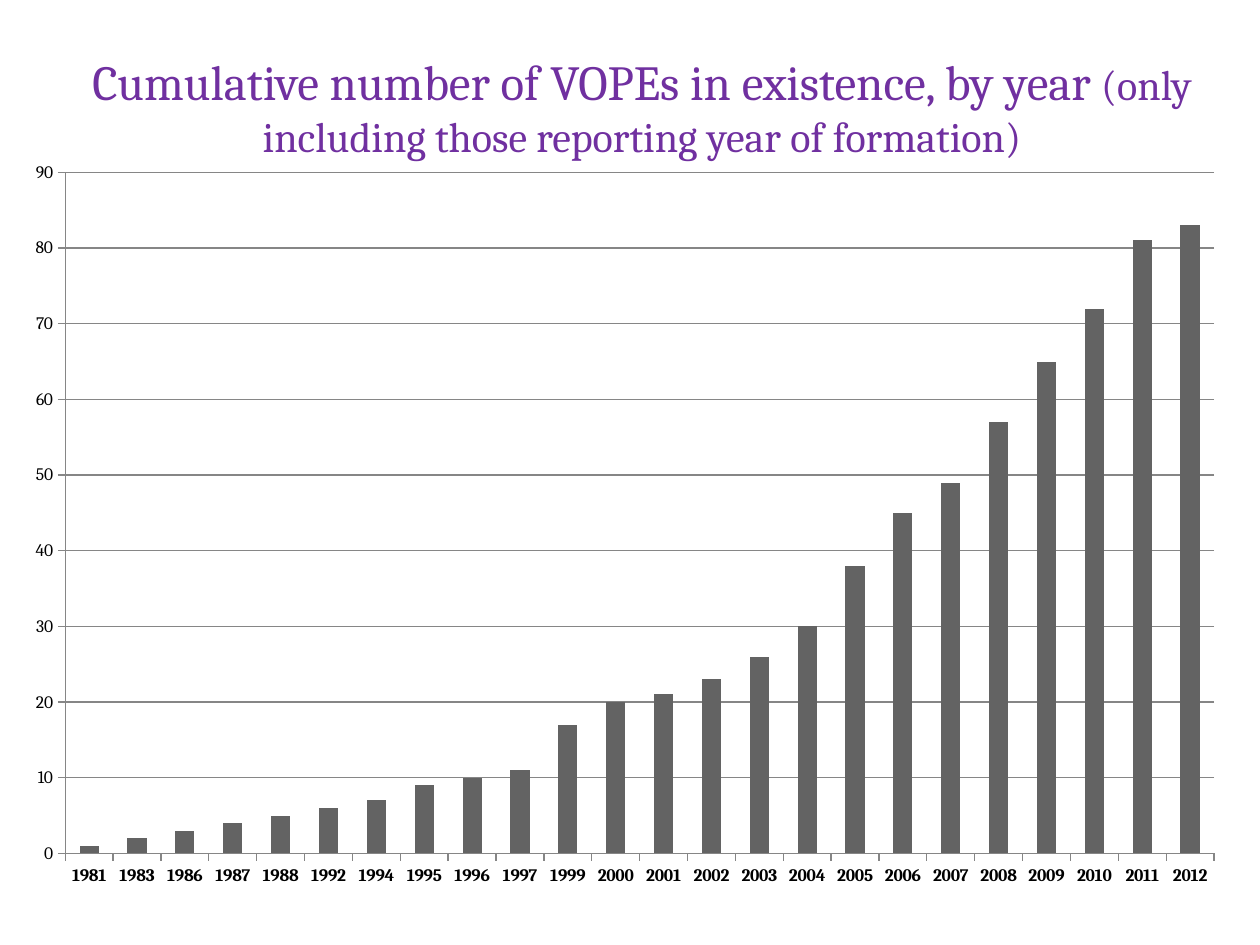
from lxml import etree
from pptx import Presentation
from pptx.chart.data import CategoryChartData
from pptx.dml.color import RGBColor
from pptx.enum import chart as ch, text
from pptx.oxml.ns import qn
from pptx.util import Inches, Pt

PURPLE = RGBColor(0x70, 0x30, 0xA0)
BLACK = RGBColor(0, 0, 0)
BAR = RGBColor(0x63, 0x63, 0x63)
RULE = RGBColor(0x86, 0x86, 0x86)
FACE = "Cambria"

TITLE = [
    ("Cumulative number of VOPEs in existence, by year ", 28),
    ("(only including those reporting year of formation)", 24),
]
COUNTS = {
    1981: 1, 1983: 2, 1986: 3, 1987: 4, 1988: 5, 1992: 6, 1994: 7, 1995: 9,
    1996: 10, 1997: 11, 1999: 17, 2000: 20, 2001: 21, 2002: 23, 2003: 26,
    2004: 30, 2005: 38, 2006: 45, 2007: 49, 2008: 57, 2009: 65, 2010: 72,
    2011: 81, 2012: 83,
}
PLOT = {"x": 0.04, "y": 0.03, "w": 0.94, "h": 0.91}


def style(item, **vals):
    """Set each named attribute of an item."""
    for key, val in vals.items():
        setattr(item, key, val)


def add_title(slide, box):
    """Place and fill the title placeholder in its box."""
    title = slide.shapes.title
    style(title, **dict(zip(("left", "top", "width", "height"), box)))
    frame = title.text_frame
    style(frame, word_wrap=True, vertical_anchor=text.MSO_ANCHOR.TOP,
          auto_size=text.MSO_AUTO_SIZE.NONE)
    para = frame.paragraphs[0]
    para.alignment = text.PP_ALIGN.CENTER
    for words, size in TITLE:
        run = para.add_run()
        run.text = words
        style(run.font, name=FACE, size=Pt(size))
        run.font.color.rgb = PURPLE


def set_plot(chart):
    """Fix the inner plot area as fractions of the chart."""
    area = chart.plots[0]._element.getparent()
    layout = area.find(qn("c:layout"))
    if layout is None:
        layout = etree.Element(qn("c:layout"))
        area.insert(0, layout)
    manual = etree.SubElement(layout, qn("c:manualLayout"))
    modes = {"layoutTarget": "inner", "xMode": "edge", "yMode": "edge"}
    for key, val in {**modes, **PLOT}.items():
        etree.SubElement(manual, qn(f"c:{key}")).set("val", str(val))


def add_bars(slide, box):
    """Draw the column chart of yearly counts in its box."""
    data = CategoryChartData(number_format="0")
    data.categories = [str(year) for year in COUNTS]
    data.add_series("Series 1", COUNTS.values())
    chart = slide.shapes.add_chart(
        ch.XL_CHART_TYPE.COLUMN_CLUSTERED, *box, data).chart
    style(chart, has_legend=False, has_title=False)
    style(chart.font, name=FACE, size=Pt(10))
    chart.font.color.rgb = BLACK
    plot = chart.plots[0]
    style(plot, gap_width=150, vary_by_categories=False)
    fill = plot.series[0].format.fill
    fill.solid()
    fill.fore_color.rgb = BAR
    years, scale = chart.category_axis, chart.value_axis
    years.tick_labels.font.bold = True
    style(scale, minimum_scale=0, maximum_scale=90, major_unit=10,
          has_major_gridlines=True)
    for axis in (years, scale):
        style(axis, major_tick_mark=ch.XL_TICK_MARK.OUTSIDE,
              minor_tick_mark=ch.XL_TICK_MARK.NONE)
    for part in (years, scale, scale.major_gridlines):
        part.format.line.color.rgb = RULE
        part.format.line.width = Pt(0.75)
    set_plot(chart)


def main():
    """Build and save the slide."""
    deck = Presentation()
    style(deck, slide_width=Inches(10), slide_height=Inches(7.5))
    slide = deck.slides.add_slide(deck.slide_layouts[5])
    add_bars(slide, [Inches(n) for n in (0.13, 1.19, 9.7, 5.94)])
    add_title(slide, [Inches(n) for n in (0.61, 0.36, 8.97, 0.98)])
    deck.save("out.pptx")


if __name__ == "__main__":
    main()
